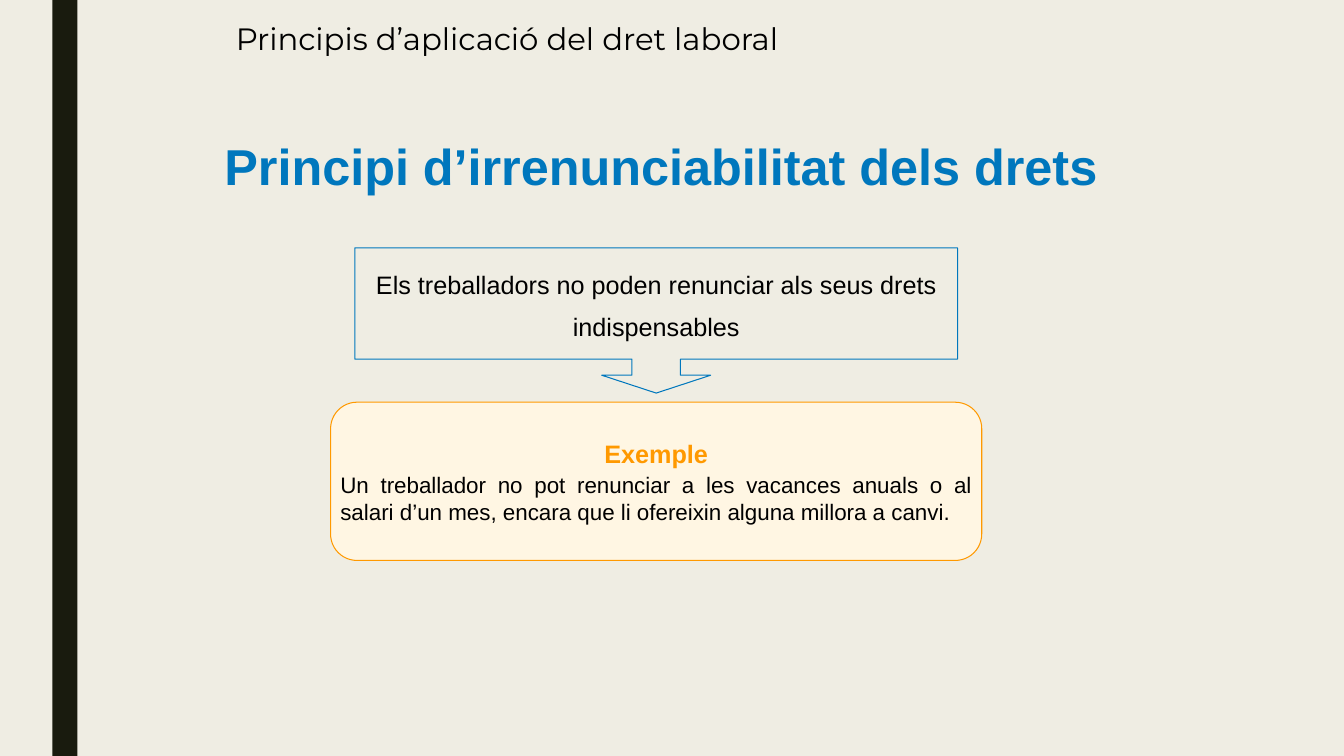
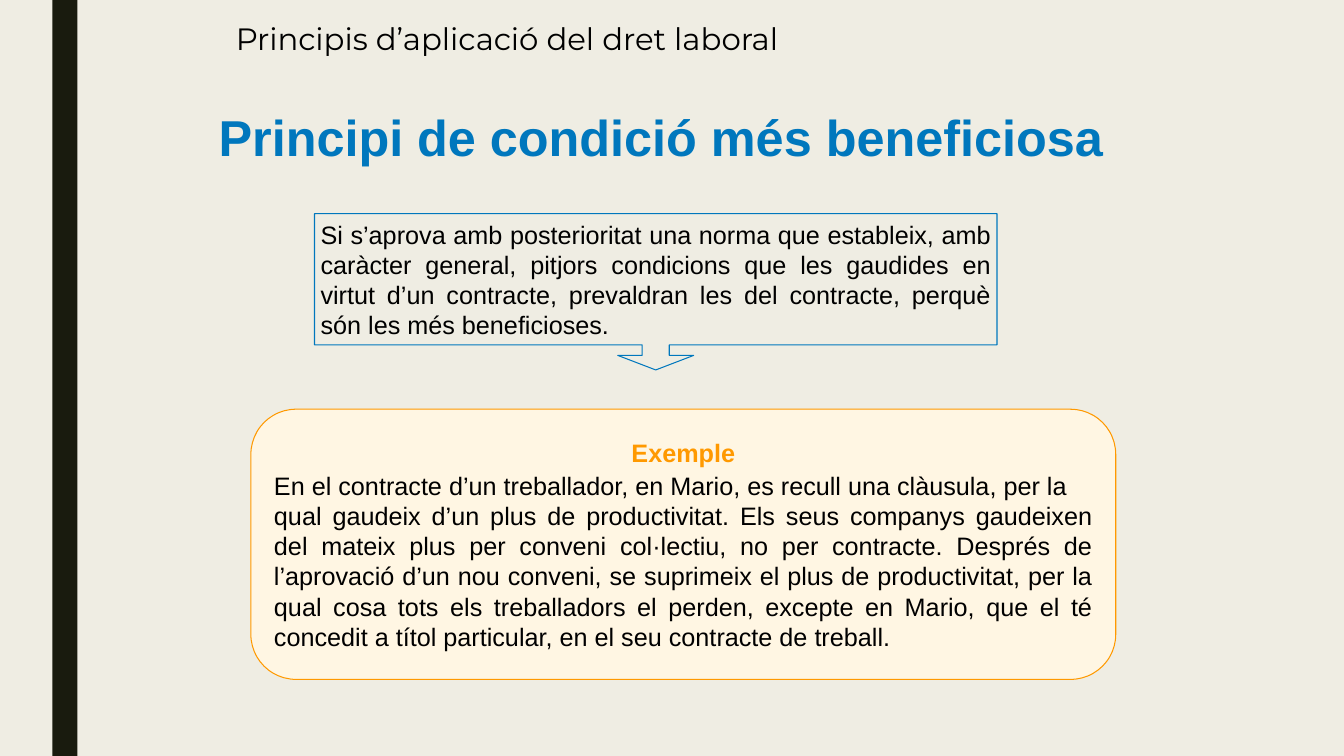
from pptx import Presentation
from pptx.dml.color import RGBColor
from pptx.enum.shapes import MSO_SHAPE
from pptx.enum.text import MSO_ANCHOR, PP_ALIGN
from pptx.util import Inches, Pt

RECT, ROUNDED = MSO_SHAPE.RECTANGLE, MSO_SHAPE.ROUNDED_RECTANGLE
CALLOUT = MSO_SHAPE.DOWN_ARROW_CALLOUT
TOP, MIDDLE = MSO_ANCHOR.TOP, MSO_ANCHOR.MIDDLE
LEFT, CENTER, JUSTIFY = PP_ALIGN.LEFT, PP_ALIGN.CENTER, PP_ALIGN.JUSTIFY

WIDTH, HEIGHT = Inches(13.33), Inches(7.5)
COL, ROW = WIDTH / 100, HEIGHT / 100  # grid of 100 columns by 100 rows

COLORS = {
    "background": "EFEDE3",
    "band": "191B0E",
    "text": "000000",
    "blue": "0077BD",
    "orange": "FF9900",
    "cream": "FFF6E3",
}
SECTION = "Principis d’aplicació del dret laboral"
SECTION_FONT = {"name": "Montserrat", "size": Pt(22)}
HEADING_FONT = {"name": "Arial", "size": Pt(36), "bold": True}
EXAMPLE_FONT = {"name": "Arial", "size": Pt(18), "bold": True}
EXAMPLE_SPACING = {"space_before": Pt(1.8), "space_after": Pt(1.8)}


def rgb(name):
    return RGBColor.from_string(COLORS[name])


def body_font(size):
    return {"name": "Arial", "size": Pt(size)}


def set_all(obj, values):
    for name, value in values.items():
        setattr(obj, name, value)


def place(cells):
    """Turn left, top, width, height in grid cells into lengths."""
    left, top, width, height = cells
    return [round(n) for n in (left * COL, top * ROW, width * COL, height * ROW)]


def set_frame(tf, insets, anchor):
    """Set insets (left, top, right, bottom, in inches), wrap and anchor."""
    sides = ("margin_left", "margin_top", "margin_right", "margin_bottom")
    set_all(tf, {side: Inches(n) for side, n in zip(sides, insets)})
    set_all(tf, {"word_wrap": True, "vertical_anchor": anchor})


def write(tf, text, font, color="text", **layout):
    """Fill the first paragraph, or add one once it has text."""
    p = tf.add_paragraph() if tf.text else tf.paragraphs[0]
    set_all(p, layout)
    r = p.add_run()
    r.text = text
    set_all(r.font, font)
    r.font.color.rgb = rgb(color)


def add_text(s, cells, text, font, color, insets, anchor, **layout):
    tf = s.shapes.add_textbox(*place(cells)).text_frame
    set_frame(tf, insets, anchor)
    write(tf, text, font, color, **layout)


def add_box(s, kind, cells, fill=None, line=None, adjust=()):
    sp = s.shapes.add_shape(kind, *place(cells))
    sp.shadow.inherit = False
    for i, value in enumerate(adjust):
        sp.adjustments[i] = value
    if fill:
        sp.fill.solid()
        sp.fill.fore_color.rgb = rgb(fill)
    else:
        sp.fill.background()
    if line:
        sp.line.color.rgb = rgb(line)
        sp.line.width = Pt(0.75)
    else:
        sp.line.fill.background()
    return sp


def add_heading(s, cells, text, **layout):
    add_text(s, cells, text, HEADING_FONT, "blue", (0.2, 0.01, 0.1, 0.01), TOP,
             alignment=CENTER, **layout)


def add_rule(s, cells, text, adjust, insets, **layout):
    """State the principle in a callout that points at its example."""
    tf = add_box(s, CALLOUT, cells, line="blue", adjust=adjust).text_frame
    set_frame(tf, insets, MIDDLE)
    write(tf, text, body_font(18), **layout)


def add_example(s, cells, paragraphs, size, side):
    """Rounded panel: paragraphs are (text, alignment), side is the side inset."""
    sp = add_box(s, ROUNDED, cells, "cream", "orange", (0.167,))
    tf = sp.text_frame
    set_frame(tf, (side, 0.05, side, 0.05), MIDDLE)
    write(tf, "Exemple", EXAMPLE_FONT, "orange", alignment=CENTER, **EXAMPLE_SPACING)
    for text, alignment in paragraphs:
        write(tf, text, body_font(size), alignment=alignment)


def add_slide(prs):
    s = prs.slides.add_slide(prs.slide_layouts[6])
    s.background.fill.solid()
    s.background.fill.fore_color.rgb = rgb("background")
    add_box(s, RECT, (3.9, 0, 1.87, 100), "band")
    add_text(s, (17.55, 2.8, 59.6, 5.07), SECTION, SECTION_FONT, "text",
             (0, 0, 0, 0), MIDDLE, line_spacing=0.9)
    return s


def add_waiver_slide(prs):
    s = add_slide(prs)
    add_example(s, (24.6, 53.2, 48.45, 20.93), [
        ("Un treballador no pot renunciar a les vacances anuals o al salari d’un mes, "
         "encara que li ofereixin alguna millora a canvi.", JUSTIFY),
    ], 16, 0.02)
    add_heading(s, (13.28, 15.73, 71.1, 10.27),
                "Principi d’irrenunciabilitat dels drets", line_spacing=1.25)
    add_rule(s, (26.4, 32.8, 44.85, 19.2),
             "Els treballadors no poden renunciar als seus drets indispensables",
             (0.334, 0.375, 0.123, 0.766), (0.06, 0.09, 0.06, 0.17),
             alignment=CENTER, line_spacing=1.4)


def add_best_condition_slide(prs):
    s = add_slide(prs)
    add_rule(s, (23.4, 28.27, 50.78, 20.67),
             "Si s’aprova amb posterioritat una norma que estableix, amb caràcter "
             "general, pitjors condicions que les gaudides en virtut d’un contracte, "
             "prevaldran les del contracte, perquè són les més beneficioses.",
             (0.173, 0.243, 0.093, 0.84), (0.06, 0.05, 0.06, 0.05),
             alignment=JUSTIFY)
    add_example(s, (18.67, 54.13, 64.35, 35.73), [
        ("En el contracte d’un treballador, en Mario, es recull una clàusula, per la",
         LEFT),
        ("qual gaudeix d’un plus de productivitat. Els seus companys gaudeixen del "
         "mateix plus per conveni col·lectiu, no per contracte. Després de l’aprovació "
         "d’un nou conveni, se suprimeix el plus de productivitat, per la qual cosa "
         "tots els treballadors el perden, excepte en Mario, que el té concedit a "
         "títol particular, en el seu contracte de treball.", JUSTIFY),
    ], 18, 0.1)
    add_heading(s, (13.8, 13.87, 70.05, 8.27), "Principi de condició més beneficiosa")


def main():
    prs = Presentation()
    set_all(prs, {"slide_width": WIDTH, "slide_height": HEIGHT})
    add_waiver_slide(prs)
    add_best_condition_slide(prs)
    prs.save("out.pptx")


if __name__ == "__main__":
    main()
